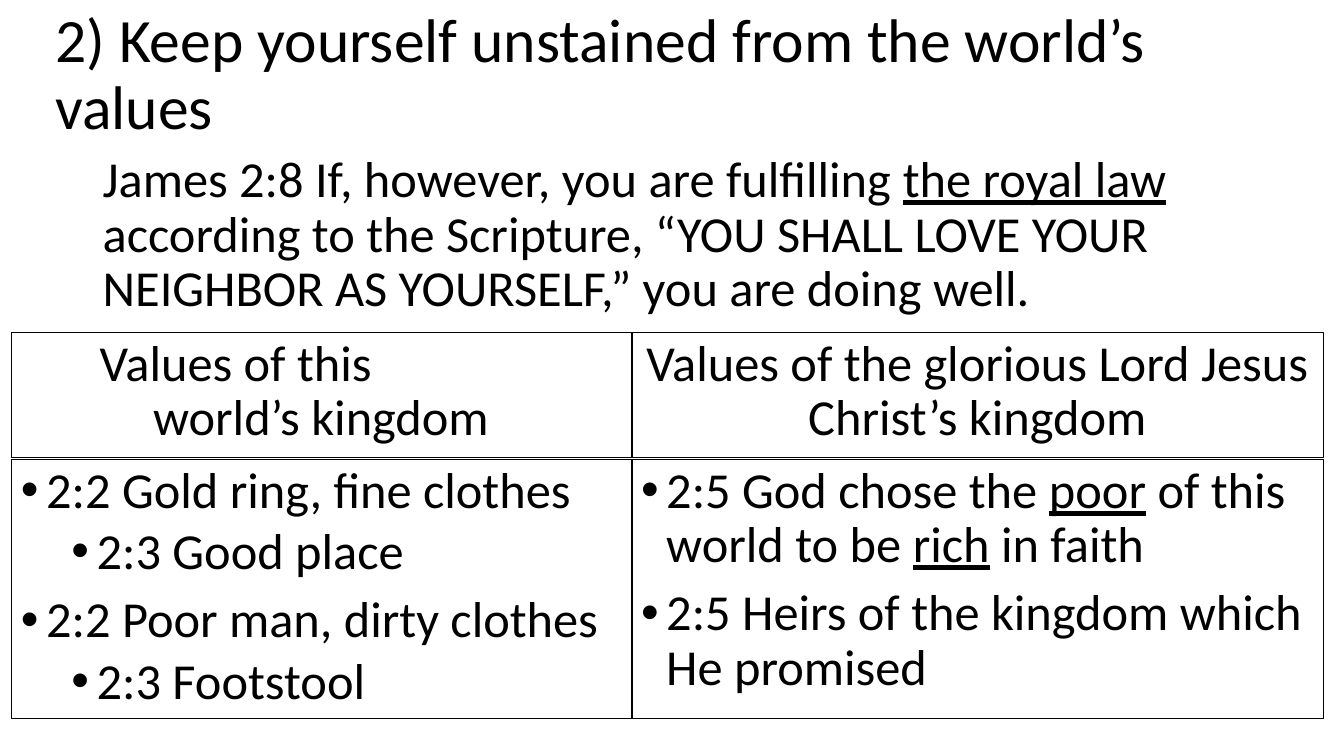
import pptx
import pptx.dml.color
import pptx.enum.shapes
import pptx.enum.text
import pptx.util
from dataclasses import dataclass
from lxml import etree
from pptx.oxml.ns import qn

Inches = pptx.util.Inches
Pt = pptx.util.Pt
ALIGN = pptx.enum.text.PP_ALIGN
ANCHOR = pptx.enum.text.MSO_ANCHOR


@dataclass(frozen=True)
class Theme:
    font: str = "Calibri"
    ink: pptx.dml.color.RGBColor = pptx.dml.color.RGBColor(0, 0, 0)
    title_size: int = 44
    body_size: int = 36
    border_width: float = 0.75
    line_spacing: float = 0.9


THEME = Theme()


def write_paragraph(paragraph, text, size=THEME.body_size, space_before=10,
                    alignment=ALIGN.LEFT):
    """Write one paragraph; words between underscores are underlined."""
    first, *others = text.split("_")
    paragraph.text = first
    for position, piece in enumerate(others):
        run = paragraph.add_run()
        run.text = piece
        run.font.underline = position % 2 == 0
    for run in paragraph.runs:
        run.font.name = THEME.font
        run.font.size = Pt(size)
        run.font.color.rgb = THEME.ink
    paragraph.alignment = alignment
    paragraph.line_spacing = THEME.line_spacing
    paragraph.space_before = Pt(space_before)


def set_indent(paragraph, left, first_line):
    properties = paragraph._p.get_or_add_pPr()
    properties.set("marL", str(Inches(left)))
    properties.set("indent", str(Inches(first_line)))
    return properties


def add_bullet(paragraph):
    properties = set_indent(paragraph, 0.25 + 0.5 * paragraph.level, -0.25)
    etree.SubElement(properties, qn("a:buFont")).set("typeface", "Arial")
    etree.SubElement(properties, qn("a:buChar")).set("char", "•")


def add_text(slide, box, text, anchor=ANCHOR.TOP, **style):
    shape = slide.shapes.add_textbox(*map(Inches, box))
    shape.text_frame.word_wrap = True
    shape.text_frame.vertical_anchor = anchor
    write_paragraph(shape.text_frame.paragraphs[0], text, **style)


def add_panel(slide, box):
    shape = slide.shapes.add_shape(
        pptx.enum.shapes.MSO_SHAPE.RECTANGLE, *map(Inches, box))
    shape.shadow.inherit = False
    shape.fill.background()
    shape.line.color.rgb = THEME.ink
    shape.line.width = Pt(THEME.border_width)
    shape.text_frame.word_wrap = True
    shape.text_frame.vertical_anchor = ANCHOR.TOP
    return shape.text_frame


def add_heading(slide, box, text, hanging=None):
    paragraph = add_panel(slide, box).paragraphs[0]
    if hanging:
        write_paragraph(paragraph, text)
        set_indent(paragraph, *hanging)
    else:
        write_paragraph(paragraph, text, alignment=ALIGN.CENTER)


def add_bullet_list(slide, box, items):
    frame = add_panel(slide, box)
    for position, (level, text) in enumerate(items):
        paragraph = frame.add_paragraph() if position else frame.paragraphs[0]
        paragraph.level = level
        write_paragraph(paragraph, text, space_before=5 if level else 10)
        add_bullet(paragraph)


def main():
    presentation = pptx.Presentation()
    presentation.slide_width = Inches(13.33)
    presentation.slide_height = Inches(7.5)
    slide = presentation.slides.add_slide(presentation.slide_layouts[6])

    # Title and verse
    add_text(slide, (0.45, 0.03, 12.68, 1.45),
             "2) Keep yourself unstained from the world’s values",
             anchor=ANCHOR.MIDDLE, size=THEME.title_size, space_before=0)
    add_text(slide, (0.92, 1.48, 11.5, 1.24),
             "James 2:8 If, however, you are fulfilling _the royal law_ "
             "according to the Scripture, “YOU SHALL LOVE YOUR NEIGHBOR AS "
             "YOURSELF,” you are doing well.")

    # Two kingdoms side by side: left, width, heading, hanging indent, items
    columns = [
        (0.11, 6.16, "Values of this\vworld’s kingdom", (1.31, -0.53),
         [(0, "2:2 Gold ring, fine clothes"),
          (1, "2:3 Good place"),
          (0, "2:2 Poor man, dirty clothes"),
          (1, "2:3 Footstool")]),
        (6.26, 6.87, "Values of the glorious Lord Jesus Christ’s kingdom", None,
         [(0, "2:5 God chose the _poor_ of this world to be _rich_ in faith"),
          (0, "2:5 Heirs of the kingdom which He promised")]),
    ]
    for left, width, heading, hanging, items in columns:
        add_heading(slide, (left, 3.3, width, 1.24), heading, hanging)
        add_bullet_list(slide, (left, 4.56, width, 2.57), items)

    presentation.save("out.pptx")


if __name__ == "__main__":
    main()
